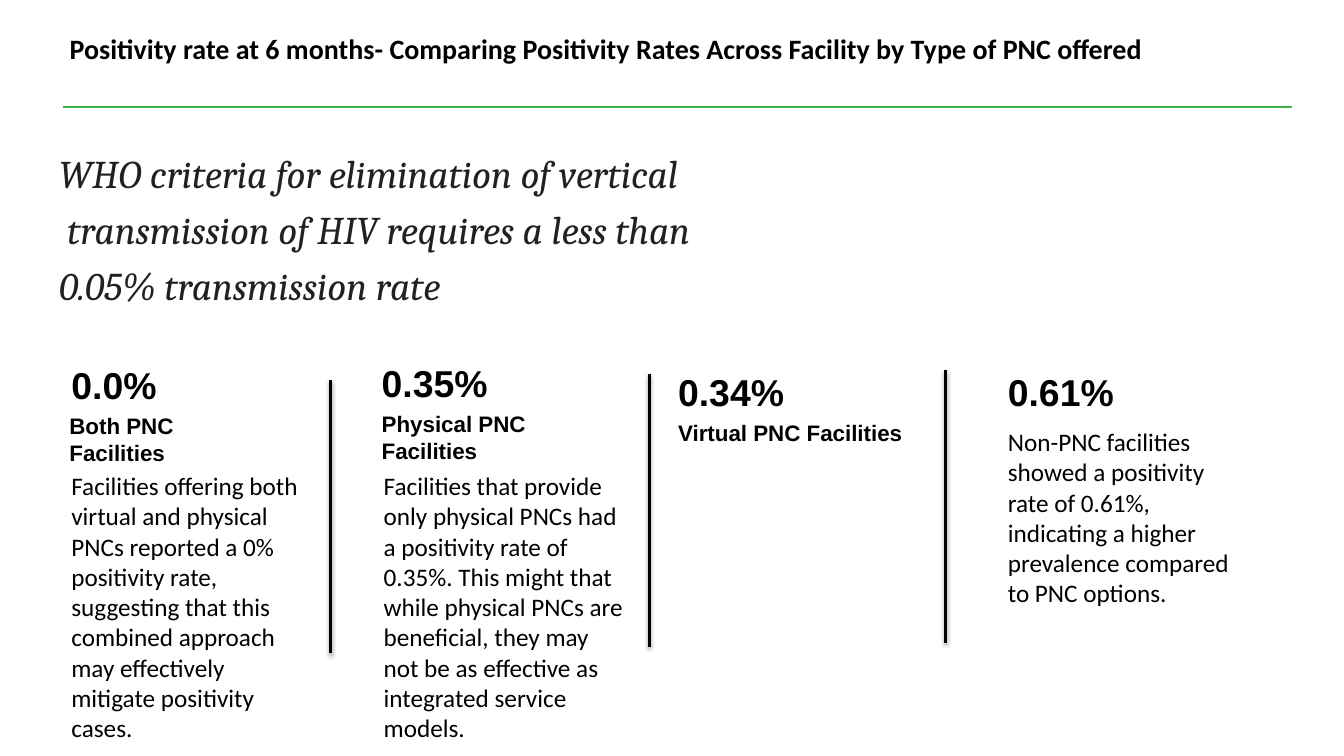
from dataclasses import dataclass

from lxml import etree
from pptx import Presentation
from pptx import util as u
from pptx.dml.color import RGBColor
from pptx.enum import shapes, text
from pptx.oxml import ns


@dataclass(frozen=True)
class Style:
    font: str
    size: float
    color: str = "000000"
    bold: bool = False
    italic: bool = False


@dataclass(frozen=True)
class Theme:
    title: Style = Style("Calibri", 20, bold=True)
    criteria: Style = Style("Cambria", 28, "212121", italic=True)
    rate: Style = Style("Arial", 26.7, bold=True)
    label: Style = Style("Arial", 16, bold=True)
    finding: Style = Style("Calibri", 18)
    rule: str = "39B54A"
    divider: str = "000000"


THEME = Theme()

CRITERIA = [
    "WHO criteria for elimination of vertical",
    "transmission of HIV requires a less than",
    "0.05% transmission rate",
]

RATES = [
    ("0.0%", 1.55, 8.99),
    ("0.35%", 9.37, 8.94),
    ("0.34%", 16.84, 9.17),
    ("0.61%", 25.15, 9.17),
]

LABELS = [
    ("Both PNC Facilities", 1.5, 10.26, 5.51, 1.63),
    ("Physical PNC Facilities", 9.37, 10.21, 6.68, 1.63),
    ("Virtual PNC Facilities", 16.84, 10.44, 8.46, 0.94),
]

FINDINGS = [
    ("Facilities offering both virtual and physical PNCs reported a 0% positivity rate, "
     "suggesting that this combined approach may effectively mitigate positivity cases.",
     1.55, 11.73, 6.5, 7.19),
    ("Facilities that provide only physical PNCs had a positivity rate of 0.35%. "
     "This might that while physical PNCs are beneficial, they may not be as effective "
     "as integrated service models.",
     9.42, 11.73, 6.68, 7.19),
    ("Non-PNC facilities showed a positivity rate of 0.61%, indicating a higher "
     "prevalence compared to PNC options.",
     25.15, 10.62, 6.07, 5.64),
]

DIVIDERS = [(8.33, 9.58), (16.36, 9.42), (23.83, 9.32)]
DIVIDER_LENGTH = 6.88


def format_text(text_frame, style):
    text_frame.word_wrap = True
    text_frame.vertical_anchor = text.MSO_ANCHOR.TOP
    for paragraph in text_frame.paragraphs:
        paragraph.alignment = text.PP_ALIGN.LEFT
        for run in paragraph.runs:
            run.font.name = style.font
            run.font.size = u.Pt(style.size)
            run.font.bold = style.bold
            run.font.italic = style.italic
            run.font.color.rgb = RGBColor.from_string(style.color)


def add_title(slide, content):
    title = slide.shapes.title
    title.left, title.top = u.Cm(1.5), u.Cm(0.66)
    title.width, title.height = u.Cm(30.94), u.Cm(1.9)
    title.text_frame.text = content
    title.text_frame.auto_size = text.MSO_AUTO_SIZE.NONE
    format_text(title.text_frame, THEME.title)


def add_text(slide, content, left, top, width, height, style):
    box = slide.shapes.add_textbox(u.Cm(left), u.Cm(top), u.Cm(width), u.Cm(height))
    box.text_frame.text = content
    format_text(box.text_frame, style)
    return box.text_frame


def add_criteria(slide):
    text_frame = add_text(slide, "\n".join(CRITERIA), 1.24, 3.63, 30.89, 1.5, THEME.criteria)
    for paragraph in text_frame.paragraphs[1:]:
        paragraph.space_before = u.Pt(6.5)
    second_line = text_frame.paragraphs[1]
    second_line._p.get_or_add_pPr().set("marL", str(u.Cm(0.2)))


def add_line(slide, start, end, color, width):
    line = slide.shapes.add_connector(
        shapes.MSO_CONNECTOR.STRAIGHT, *(u.Cm(value) for value in start + end))
    line.line.color.rgb = RGBColor.from_string(color)
    line.line.width = u.Pt(width)
    return etree.SubElement(line._element.spPr, ns.qn("a:effectLst"))


def add_divider(slide, left, top):
    effects = add_line(slide, (left, top), (left, top + DIVIDER_LENGTH), THEME.divider, 2)
    shadow = etree.SubElement(
        effects, ns.qn("a:outerShdw"), blurRad=str(u.Pt(3.1)), dist=str(u.Pt(1.6)),
        dir="5400000", rotWithShape="0")
    color = etree.SubElement(shadow, ns.qn("a:srgbClr"), val=THEME.divider)
    etree.SubElement(color, ns.qn("a:alpha"), val="38000")


def main():
    presentation = Presentation()
    presentation.slide_width, presentation.slide_height = u.Cm(33.87), u.Cm(19.05)
    slide = presentation.slides.add_slide(presentation.slide_layouts.get_by_name("Title Only"))

    add_title(slide, "Positivity rate at 6 months- Comparing Positivity Rates "
                     "Across Facility by Type of PNC offered")
    add_line(slide, (1.6, 2.69), (32.56, 2.69), THEME.rule, 1.5)
    add_criteria(slide)
    for content, left, top in RATES:
        add_text(slide, content, left, top, 3.66, 1.4, THEME.rate)
    for label in LABELS:
        add_text(slide, *label, THEME.label)
    for finding in FINDINGS:
        add_text(slide, *finding, THEME.finding)
    for left, top in DIVIDERS:
        add_divider(slide, left, top)

    presentation.save("out.pptx")


if __name__ == "__main__":
    main()
